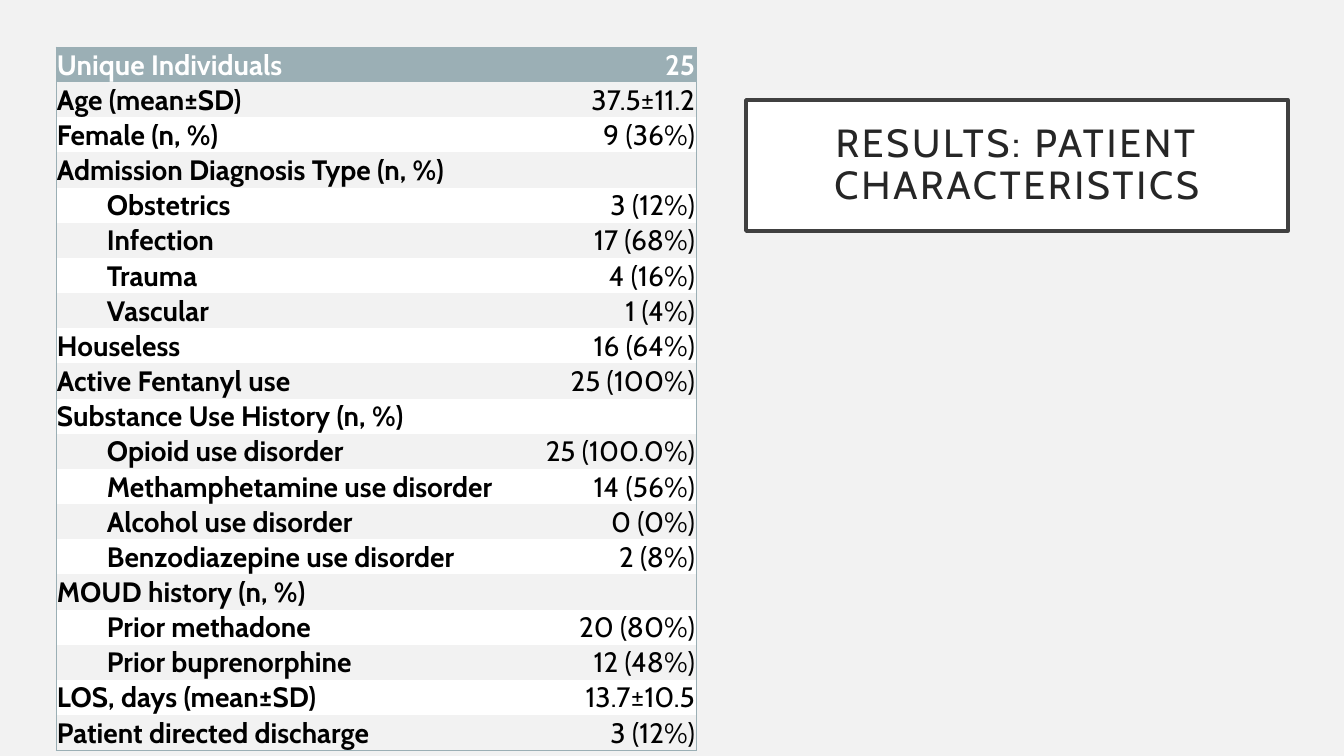
from lxml.etree import SubElement
from pptx import Presentation
from pptx.dml.color import RGBColor
from pptx.enum.shapes import MSO_SHAPE
from pptx.enum.text import MSO_ANCHOR, PP_ALIGN
from pptx.oxml.ns import qn
from pptx.util import Pt

EMU_PER_PX = 914400 / 100.8
FONT = "Cabin"
NO_STYLE = "{2D5ABB26-0587-4C30-8999-92F81FD0307C}"
WHITE = RGBColor(0xFF, 0xFF, 0xFF)
BLACK = RGBColor(0, 0, 0)
PALE = RGBColor(0xF2, 0xF2, 0xF2)
SLATE = RGBColor(0x9B, 0xAF, 0xB5)
FRAME = RGBColor(0x40, 0x40, 0x40)
HEADING = RGBColor(0x26, 0x26, 0x26)

ROW_HEIGHT = 35
COLUMN_WIDTHS = (474, 166)
INDENT = 50
CHARACTERISTICS = [
    (0, "Unique Individuals", "25"),
    (0, "Age (mean±SD)", "37.5±11.2"),
    (0, "Female (n, %)", "9 (36%)"),
    (0, "Admission Diagnosis Type (n, %)", ""),
    (1, "Obstetrics", "3 (12%)"),
    (1, "Infection", "17 (68%)"),
    (1, "Trauma", "4 (16%)"),
    (1, "Vascular", "1 (4%)"),
    (0, "Houseless", "16 (64%)"),
    (0, "Active Fentanyl use", "25 (100%)"),
    (0, "Substance Use History (n, %)", ""),
    (1, "Opioid use disorder", "25 (100.0%)"),
    (1, "Methamphetamine use disorder", "14 (56%)"),
    (1, "Alcohol use disorder", "0 (0%)"),
    (1, "Benzodiazepine use disorder", "2 (8%)"),
    (0, "MOUD history (n, %)", ""),
    (1, "Prior methadone", "20 (80%)"),
    (1, "Prior buprenorphine", "12 (48%)"),
    (0, "LOS, days (mean±SD)", "13.7±10.5"),
    (0, "Patient directed discharge", "3 (12%)"),
]


def px(length):
    return round(length * EMU_PER_PX)


def apply(target, values):
    for attribute, value in values.items():
        setattr(target, attribute, value)


def write(paragraph, text, size, color, bold=False):
    run = paragraph.add_run()
    run.text = text
    apply(run.font, {"name": FONT, "size": Pt(size), "bold": bold})
    run.font.color.rgb = color
    return run


def add_title(slide, text, left, top, width, height):
    title = slide.shapes.add_shape(
        MSO_SHAPE.RECTANGLE, px(left), px(top), px(width), px(height))
    title.shadow.inherit = False
    title.fill.solid()
    title.fill.fore_color.rgb = WHITE
    title.line.color.rgb = FRAME
    title.line.width = Pt(2.5)
    frame = title.text_frame
    sides = ("left", "right", "top", "bottom")
    apply(frame, {f"margin_{side}": px(20) for side in sides})
    apply(frame, {"word_wrap": True, "vertical_anchor": MSO_ANCHOR.MIDDLE})
    paragraph = frame.paragraphs[0]
    apply(paragraph, {"alignment": PP_ALIGN.CENTER, "line_spacing": 0.9})
    heading = write(paragraph, text, 28, HEADING)
    heading.font._element.set("spc", "200")


def add_border(cell, edge):
    border = SubElement(cell._tc.get_or_add_tcPr(), qn(f"a:ln{edge}"), w=str(Pt(0.5)))
    fill = SubElement(border, qn("a:solidFill"))
    SubElement(fill, qn("a:srgbClr"), val=str(SLATE))


def fill_cell(cell, text, edges, background, color, bold, alignment, level):
    for edge in edges:
        add_border(cell, edge)
    apply(cell, {"margin_left": px(1), "margin_right": px(1), "margin_top": px(1),
                 "margin_bottom": 0, "vertical_anchor": MSO_ANCHOR.BOTTOM})
    cell.fill.solid()
    cell.fill.fore_color.rgb = background
    paragraph = cell.text_frame.paragraphs[0]
    paragraph.alignment = alignment
    if level:
        paragraph._p.get_or_add_pPr().set("marL", str(px(level * INDENT)))
    if text:
        write(paragraph, text, 20, color, bold)


def add_characteristics(slide, left, top):
    count = len(CHARACTERISTICS)
    table = slide.shapes.add_table(
        count, 2, px(left), px(top), px(sum(COLUMN_WIDTHS)), px(count * ROW_HEIGHT)).table
    apply(table, {"first_row": True, "horz_banding": False})
    table._tbl.tblPr.find(qn("a:tableStyleId")).text = NO_STYLE
    for column, width in zip(table.columns, COLUMN_WIDTHS):
        column.width = px(width)
    for index, (level, label, value) in enumerate(CHARACTERISTICS):
        table.rows[index].height = px(ROW_HEIGHT)
        header = index == 0
        outer = "T" if header else "B" if index == count - 1 else ""
        background = SLATE if header else PALE if index % 2 else WHITE
        color = WHITE if header else BLACK
        fill_cell(table.cell(index, 0), label, "L" + outer, background, color,
                  True, PP_ALIGN.LEFT, level)
        fill_cell(table.cell(index, 1), value, "R" + outer, background, color,
                  header, PP_ALIGN.RIGHT, 0)


def main():
    deck = Presentation()
    apply(deck, {"slide_width": px(1344), "slide_height": px(756)})
    slide = deck.slides.add_slide(deck.slide_layouts[6])
    slide.background.fill.solid()
    slide.background.fill.fore_color.rgb = PALE
    add_title(slide, "RESULTS: PATIENT CHARACTERISTICS", 746, 100, 542, 131)
    add_characteristics(slide, 56, 47)
    deck.save("out.pptx")


if __name__ == "__main__":
    main()
